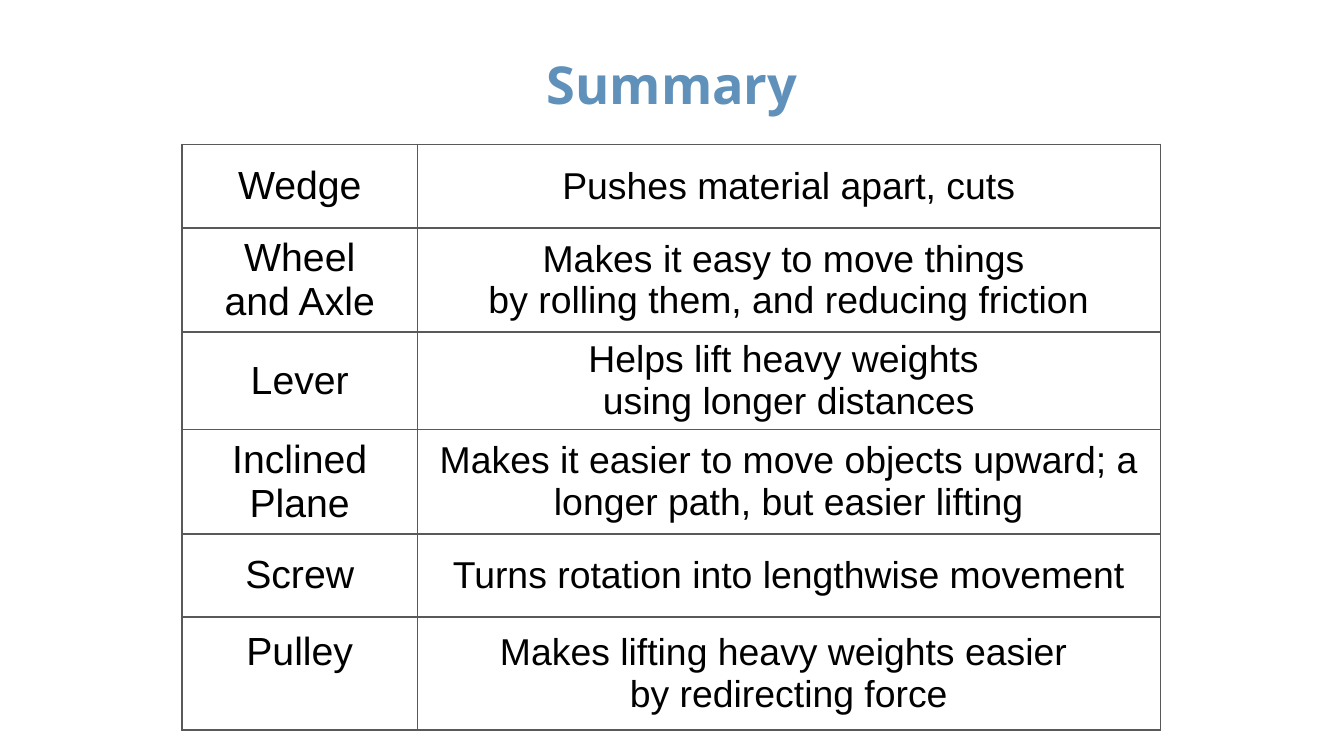
"""Build the simple machines summary slide."""
from typing import NamedTuple

from lxml.etree import SubElement
from pptx import Presentation
from pptx.dml.color import RGBColor
from pptx.enum.text import MSO_ANCHOR as Anchor, PP_ALIGN as Align
from pptx.oxml.ns import qn
from pptx.util import Emu, Pt

PX_PER_INCH = 200
EMU_PER_PX = 914400 // PX_PER_INCH
SLIDE_WIDTH, SLIDE_HEIGHT = 2000, 1125
BLACK, BLUE, GRAY = "000000", "6091BA", "595959"
COLUMN_WIDTHS = (350, 1106)
TABLE_LEFT, TABLE_TOP = 271, 215
CELL_SIDE, CELL_EDGE = 14, 6


class Machine(NamedTuple):
    """A table row: a simple machine and what it does."""
    name: str
    purpose: str
    height: int
    name_lift: int = 0


MACHINES = (
    Machine("Wedge", "Pushes material apart, cuts", 124),
    Machine("Wheel\nand Axle", "Makes it easy to move things \nby rolling them, and reducing friction", 155),
    Machine("Lever", "Helps lift heavy weights \nusing longer distances", 144),
    Machine("Inclined Plane", "Makes it easier to move objects upward; a longer path, but easier lifting", 155),
    Machine("Screw", "Turns rotation into lengthwise movement", 124),
    Machine("Pulley", "Makes lifting heavy weights easier \nby redirecting force", 168, name_lift=64),
)


def px(length: int) -> Emu:
    """Turn px into EMU."""
    return Emu(length * EMU_PER_PX)


def color(value: str) -> RGBColor:
    """Turn a hex string into a colour."""
    return RGBColor.from_string(value)


def write(frame, text: str, *, size: int, font: str = "Arial", fill: str = BLACK, bold: bool = False) -> None:
    """Write one centred paragraph into a text frame."""
    frame.word_wrap = True
    para = frame.paragraphs[0]
    para.text = text.replace("\n", "\v")
    para.alignment = Align.CENTER
    for span in para.runs:
        span.font.size = Pt(size)
        span.font.name = font
        span.font.bold = bold
        span.font.color.rgb = color(fill)


def add_borders(cell, fill: str, width: int) -> None:
    """Draw a solid line on all four sides of a cell."""
    properties = cell._tc.get_or_add_tcPr()
    for side in ("lnL", "lnR", "lnT", "lnB"):
        line = SubElement(properties, qn(f"a:{side}"), w=str(Pt(width)))
        solid = SubElement(line, qn("a:solidFill"))
        SubElement(solid, qn("a:srgbClr"), val=fill)


def fill_cell(cell, text: str, *, size: int, lift: int = 0) -> None:
    """Format a table cell and write its text."""
    cell.margin_left = cell.margin_right = px(CELL_SIDE)
    cell.margin_top = px(CELL_EDGE)
    cell.margin_bottom = px(CELL_EDGE + lift)
    cell.vertical_anchor = Anchor.MIDDLE
    add_borders(cell, GRAY, 1)
    cell.fill.background()
    write(cell.text_frame, text, size=size)


def add_title(page, text: str) -> None:
    """Add the slide heading."""
    box = page.shapes.add_textbox(px(68), px(58), px(1864), px(126))
    frame = box.text_frame
    frame.margin_top, frame.margin_bottom = px(8), px(0)
    frame.vertical_anchor = Anchor.MIDDLE
    write(frame, text, size=28, font="Open Sans", fill=BLUE, bold=True)


def add_summary(page, machines: tuple[Machine, ...]) -> None:
    """Add the table of machines and their purposes."""
    height = sum(machine.height for machine in machines)
    table = page.shapes.add_table(
        len(machines), len(COLUMN_WIDTHS),
        px(TABLE_LEFT), px(TABLE_TOP), px(sum(COLUMN_WIDTHS)), px(height),
    ).table
    table.first_row = table.horz_banding = False
    for column, width in zip(table.columns, COLUMN_WIDTHS):
        column.width = px(width)
    for row, machine in zip(table.rows, machines):
        row.height = px(machine.height)
        name_cell, purpose_cell = row.cells
        fill_cell(name_cell, machine.name, size=21, lift=machine.name_lift)
        fill_cell(purpose_cell, machine.purpose, size=20)


def main() -> None:
    """Build and save the deck."""
    deck = Presentation()
    deck.slide_width, deck.slide_height = px(SLIDE_WIDTH), px(SLIDE_HEIGHT)
    page = deck.slides.add_slide(deck.slide_layouts[6])
    add_title(page, "Summary")
    add_summary(page, MACHINES)
    deck.save("out.pptx")


if __name__ == "__main__":
    main()
